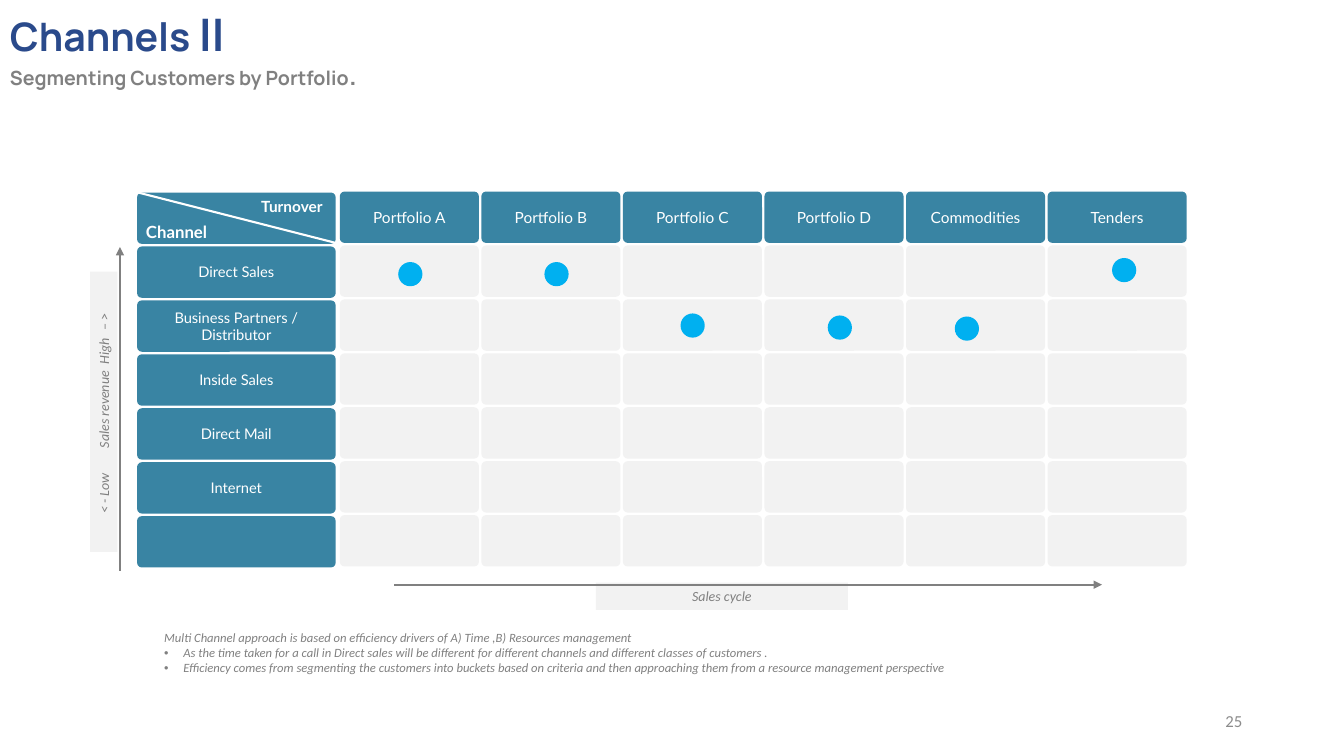
from lxml.etree import SubElement
from pptx import Presentation
from pptx.dml.color import RGBColor
from pptx.enum.shapes import MSO_CONNECTOR, MSO_SHAPE
from pptx.enum.text import MSO_ANCHOR, PP_ALIGN
from pptx.oxml.ns import qn
from pptx.util import Inches, Pt

NAVY = RGBColor(0x2A, 0x4A, 0x8B)
TEAL = RGBColor(0x39, 0x84, 0xA3)
SKY = RGBColor(0x00, 0xB0, 0xF0)
GRAY = RGBColor(0x80, 0x80, 0x80)
PAGE_GRAY = RGBColor(0x8C, 0x8C, 0x8C)
PALE = RGBColor(0xF2, 0xF2, 0xF2)
WHITE = RGBColor(0xFF, 0xFF, 0xFF)

PORTFOLIOS = ["Portfolio A", "Portfolio B", "Portfolio C", "Portfolio D", "Commodities", "Tenders"]
CHANNELS = ["Direct Sales", "Business Partners / Distributor", "Inside Sales",
            "Direct Mail", "Internet", ""]
DOTS = [(3.95, 2.6), (5.4, 2.6), (6.75, 3.11), (8.21, 3.13), (9.47, 3.14), (11.03, 2.56)]
NOTES = [
    "Multi Channel approach is based on efficiency drivers of A) Time ,B) Resources management",
    "As the time taken for a call in Direct sales will be different for different channels "
    "and different classes of customers .",
    "Efficiency comes from segmenting the customers into buckets based on criteria and then "
    "approaching them from a resource management perspective",
]

LABEL_LEFT, LABEL_WIDTH = 1.36, 1.97
GRID_LEFT, GRID_TOP = 3.37, 1.9
CELL_WIDTH, CELL_HEIGHT = 1.38, 0.51
COLUMN_STEP = (10.39 - GRID_LEFT) / 5
ROW_STEP = (5.11 - GRID_TOP) / 6


def style_run(run, font_name, size, color, bold=False, italic=False):
    font = run.font
    font.name, font.size = font_name, Pt(size)
    font.bold, font.italic = bold, italic
    font.color.rgb = color


def add_run(paragraph, text, *style, **emphasis):
    run = paragraph.add_run()
    run.text = text
    style_run(run, *style, **emphasis)


def add_filled(slide, kind, left, top, width, height, fill):
    shape = slide.shapes.add_shape(kind, Inches(left), Inches(top), Inches(width), Inches(height))
    shape.shadow.inherit = False
    shape.fill.solid()
    shape.fill.fore_color.rgb = fill
    shape.line.fill.background()
    return shape


def add_cell(slide, left, top, width, fill, text="", size=11):
    cell = add_filled(slide, MSO_SHAPE.ROUNDED_RECTANGLE, left, top, width, CELL_HEIGHT, fill)
    cell.adjustments[0] = 0.093
    if text:
        frame = cell.text_frame
        frame.margin_left = frame.margin_right = frame.margin_top = frame.margin_bottom = 0
        frame.vertical_anchor = MSO_ANCHOR.MIDDLE
        paragraph = frame.paragraphs[0]
        paragraph.alignment = PP_ALIGN.CENTER
        add_run(paragraph, text, "Lato", size, WHITE)


def add_text_box(slide, left, top, width, height, align=PP_ALIGN.LEFT):
    box = slide.shapes.add_textbox(Inches(left), Inches(top), Inches(width), Inches(height))
    box.text_frame.word_wrap = True
    box.text_frame.paragraphs[0].alignment = align
    return box.text_frame


def add_line(slide, start, end, color, arrow=False):
    line = slide.shapes.add_connector(MSO_CONNECTOR.STRAIGHT, *map(Inches, start + end))
    line.line.color.rgb = color
    line.line.width = Pt(1.5)
    properties = line._element.spPr
    if arrow:
        SubElement(properties.find(qn("a:ln")), qn("a:tailEnd"), type="triangle")
    SubElement(properties, qn("a:effectLst"))


def add_title(slide):
    frame = add_text_box(slide, 0, 0.02, 5.03, 0.94)
    title = frame.paragraphs[0]
    add_run(title, "Channels", "Manrope", 28, NAVY, bold=True)
    add_run(title, " II", "Manrope", 32, NAVY, bold=True)
    subtitle = frame.add_paragraph()
    add_run(subtitle, "Segmenting Customers by Portfolio", "Manrope", 14, GRAY, bold=True)
    add_run(subtitle, ".", "Manrope", 18, GRAY, bold=True)


def add_matrix(slide):
    for column, portfolio in enumerate(PORTFOLIOS):
        left = GRID_LEFT + column * COLUMN_STEP
        add_cell(slide, left, GRID_TOP, CELL_WIDTH, TEAL, portfolio)
        for row in range(1, len(CHANNELS) + 1):
            add_cell(slide, left, GRID_TOP + row * ROW_STEP, CELL_WIDTH, PALE)
    for row, channel in enumerate([""] + CHANNELS):
        top = GRID_TOP + 0.01 + row * ROW_STEP
        add_cell(slide, LABEL_LEFT, top, LABEL_WIDTH, TEAL, channel, 10.5)
    for left, top in DOTS:
        add_filled(slide, MSO_SHAPE.OVAL, left, top, 0.24, 0.24, SKY)


def add_corner_labels(slide):
    channel = add_text_box(slide, 1.35, 2.15, 1.13, 0.3)
    add_run(channel.paragraphs[0], "Channel", "Lato", 12, WHITE, bold=True)
    turnover = add_text_box(slide, 2.4, 1.91, 0.9, 0.29, PP_ALIGN.RIGHT)
    add_run(turnover.paragraphs[0], "Turnover", "Lato", 11, WHITE, bold=True)
    add_line(slide, (3.33, 2.41), (1.37, 1.91), WHITE)


def add_axis_label(slide, left, top, width, text, align):
    label = add_filled(slide, MSO_SHAPE.RECTANGLE, left, top, width, 0.27, PALE)
    label.text_frame.vertical_anchor = MSO_ANCHOR.TOP
    paragraph = label.text_frame.paragraphs[0]
    paragraph.alignment = align
    add_run(paragraph, text, "Calibri", 10, GRAY, italic=True)
    return label


def add_axes(slide):
    add_axis_label(slide, 5.91, 5.78, 2.5, "Sales cycle", PP_ALIGN.CENTER)
    add_line(slide, (3.91, 5.8), (10.93, 5.8), GRAY, arrow=True)
    add_line(slide, (1.19, 5.66), (1.19, 2.45), GRAY, arrow=True)
    revenue = add_axis_label(slide, -0.36, 3.95, 2.78,
                             "< - Low\tSales revenue\tHigh\t– >", PP_ALIGN.LEFT)
    revenue.rotation = 270
    revenue.text_frame.margin_left = Inches(0.38)
    tabs = SubElement(revenue.text_frame.paragraphs[0]._p.get_or_add_pPr(), qn("a:tabLst"))
    for position in (0.65, 1.48, 1.82):
        SubElement(tabs, qn("a:tab"), pos=str(Inches(position)), algn="l")


def add_notes_panel(slide):
    panel = add_filled(slide, MSO_SHAPE.RECTANGLE, 1.53, 6.2, 9.4, 0.71, WHITE)
    frame = panel.text_frame
    frame.vertical_anchor = MSO_ANCHOR.TOP
    frame.text = "\n".join(NOTES)
    for index, paragraph in enumerate(frame.paragraphs):
        paragraph.alignment = PP_ALIGN.LEFT
        if index:
            properties = paragraph._p.get_or_add_pPr()
            properties.set("marL", str(Inches(0.19)))
            properties.set("indent", str(Inches(-0.19)))
            SubElement(properties, qn("a:buFont"), typeface="Arial")
            SubElement(properties, qn("a:buChar"), char="•")
        style_run(paragraph.runs[0], "Calibri", 9, GRAY, italic=True)


def add_page_number(slide):
    frame = add_text_box(slide, 9.42, 6.95, 3, 0.4, PP_ALIGN.RIGHT)
    frame.vertical_anchor = MSO_ANCHOR.MIDDLE
    add_run(frame.paragraphs[0], "25", "Calibri", 12, PAGE_GRAY)


def main():
    presentation = Presentation()
    presentation.slide_width = Inches(13.33)
    presentation.slide_height = Inches(7.5)
    slide = presentation.slides.add_slide(presentation.slide_layouts[6])
    add_title(slide)
    add_matrix(slide)
    add_corner_labels(slide)
    add_axes(slide)
    add_notes_panel(slide)
    add_page_number(slide)
    presentation.save("out.pptx")


if __name__ == "__main__":
    main()
